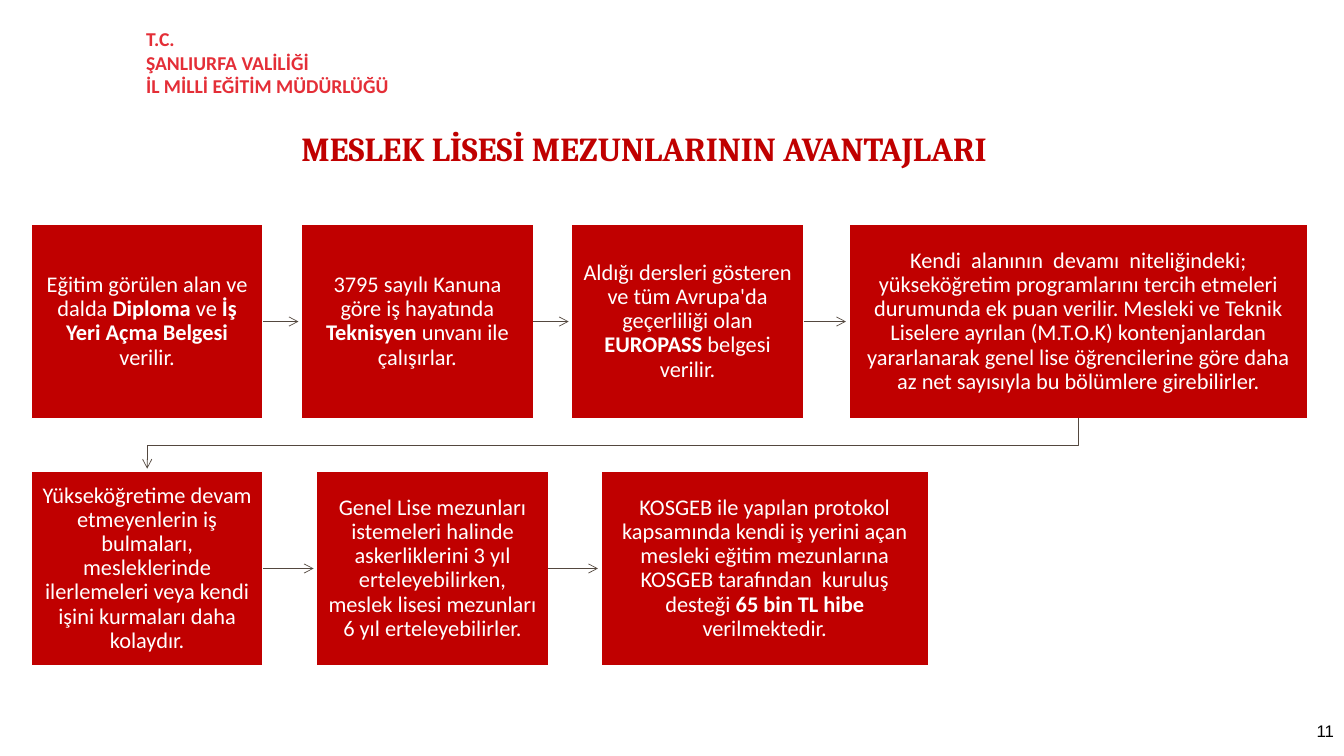
import pptx
import pptx.util
from dataclasses import dataclass
from lxml import etree
from pptx.dml.color import RGBColor
from pptx.enum.shapes import MSO_CONNECTOR, MSO_SHAPE
from pptx.enum.text import MSO_ANCHOR, PP_ALIGN
from pptx.oxml.ns import qn

In, Pt = pptx.util.Inches, pptx.util.Pt

HEADER = ["T.C.", "ŞANLIURFA VALİLİĞİ", "İL MİLLİ EĞİTİM MÜDÜRLÜĞÜ"]
TITLE = "MESLEK LİSESİ MEZUNLARININ AVANTAJLARI"
PAGE = "11"

# Each row: its top, then (gap before, width, text); ** switches bold on and off.
ROWS = [
    (2.23, [
        (0.31, 2.3, "Eğitim görülen alan ve dalda **Diploma **ve **İş Yeri Açma Belgesi **verilir."),
        (0.38, 2.3, "3795 sayılı Kanuna göre iş hayatında **Teknisyen **unvanı ile çalışırlar."),
        (0.38, 2.3, "Aldığı dersleri gösteren ve tüm Avrupa'da geçerliliği olan "
                    "**EUROPASS **belgesi verilir."),
        (0.45, 4.55, "Kendi  alanının  devamı  niteliğindeki; yükseköğretim programlarını tercih "
                     "etmeleri durumunda ek puan verilir. Mesleki ve Teknik Liselere ayrılan "
                     "(M.T.O.K) kontenjanlardan yararlanarak genel lise öğrencilerine göre daha "
                     "az net sayısıyla bu bölümlere girebilirler."),
    ]),
    (4.68, [
        (0.31, 2.3, "Yükseköğretime devam etmeyenlerin iş bulmaları, mesleklerinde "
                    "ilerlemeleri veya kendi işini kurmaları daha kolaydır."),
        (0.53, 2.3, "Genel Lise mezunları istemeleri halinde askerliklerini 3 yıl "
                    "erteleyebilirken, meslek lisesi mezunları 6 yıl erteleyebilirler."),
        (0.52, 3.25, "KOSGEB ile yapılan protokol kapsamında kendi iş yerini açan mesleki "
                     "eğitim mezunlarına KOSGEB tarafından  kuruluş desteği "
                     "**65 bin TL hibe **verilmektedir."),
    ]),
]
BOX_H = 1.92
ARROW_GAP = 0.03


@dataclass(frozen=True)
class Theme:
    red: str = "C00000"
    header: str = "E42E37"
    white: str = "FFFFFF"
    black: str = "000000"
    arrow: str = "53483F"
    body_font: str = "Calibri"
    title_font: str = "Cambria"
    page_font: str = "Arial"
    title_size: int = 24
    body_size: int = 16
    header_size: int = 14
    page_size: int = 12


T = Theme()


def write(sp, lines, font=T.body_font, size=T.body_size, color=T.white, bold=False,
          align=PP_ALIGN.LEFT, anchor=MSO_ANCHOR.TOP, spacing=None, insets=(0.1, 0.05, 0.1, 0.05)):
    """Fill a shape with lines of text; ** inside a line toggles bold."""
    tf = sp.text_frame
    tf.word_wrap = True
    tf.vertical_anchor = anchor
    tf.margin_left, tf.margin_top, tf.margin_right, tf.margin_bottom = map(In, insets)
    for i, line in enumerate(lines):
        p = tf.add_paragraph() if i else tf.paragraphs[0]
        p.alignment = align
        if spacing:
            p.line_spacing = spacing
        for j, part in enumerate(line.split("**")):
            r = p.add_run()
            r.text = part
            r.font.name, r.font.size = font, Pt(size)
            r.font.bold = bold or j % 2 == 1
            r.font.color.rgb = RGBColor.from_string(color)


def add_rect(slide, x, y, w, h, fill):
    sp = slide.shapes.add_shape(MSO_SHAPE.RECTANGLE, In(x), In(y), In(w), In(h))
    sp.shadow.inherit = False
    sp.fill.solid()
    sp.fill.fore_color.rgb = RGBColor.from_string(fill)
    sp.line.color.rgb = RGBColor.from_string(T.white)
    sp.line.width = Pt(1)
    return sp


def style_arrow(sp):
    sp.line.color.rgb = RGBColor.from_string(T.arrow)
    sp.line.width = Pt(0.5)
    ln = sp.line._get_or_add_ln()
    etree.SubElement(ln, qn("a:tailEnd"), type="arrow")


def add_arrow(slide, x1, x2, y):
    cx = slide.shapes.add_connector(MSO_CONNECTOR.STRAIGHT, In(x1), In(y), In(x2), In(y))
    style_arrow(cx)
    etree.SubElement(cx._element.spPr, qn("a:effectLst"))


def add_bent_arrow(slide, x1, y1, x2, y2):
    """Arrow that leaves downwards, runs across and arrives downwards."""
    mid = (y1 + y2 + ARROW_GAP) / 2
    fb = slide.shapes.build_freeform(In(x1), In(y1), scale=1.0)
    fb.add_line_segments([(In(x1), In(mid)), (In(x2), In(mid)), (In(x2), In(y2))], close=False)
    sp = fb.convert_to_shape()
    sp.shadow.inherit = False
    sp.fill.background()
    style_arrow(sp)


def add_row(slide, top, boxes):
    """Draw a row of boxes joined by arrows; return the centre x of each box."""
    right, centres = 0, []
    for gap, width, text in boxes:
        left = right + gap
        if centres:
            add_arrow(slide, right, left - ARROW_GAP, top + BOX_H / 2)
        sp = add_rect(slide, left, top, width, BOX_H, T.red)
        write(sp, [text], align=PP_ALIGN.CENTER, anchor=MSO_ANCHOR.MIDDLE, spacing=0.9,
              insets=(0.11, 0.12, 0.11, 0.12))
        right = left + width
        centres.append(left + width / 2)
    return centres


def main():
    prs = pptx.Presentation()
    prs.slide_width, prs.slide_height = In(13.33), In(7.5)
    slide = prs.slides.add_slide(prs.slide_layouts[5])

    title = slide.shapes.title
    title.left, title.top, title.width, title.height = In(2.98), In(1.25), In(6.93), In(0.43)
    write(title, [TITLE], font=T.title_font, size=T.title_size, color=T.red, bold=True,
          insets=(0.01, 0.02, 0, 0))
    header = add_rect(slide, 1.35, 0.31, 2.68, 0.62, T.white)
    header.line.fill.background()
    write(header, HEADER, size=T.header_size, color=T.header, bold=True, anchor=MSO_ANCHOR.MIDDLE)
    page = slide.shapes.add_textbox(In(11.57), In(7.1), In(1.76), In(0.3))
    write(page, [PAGE], font=T.page_font, size=T.page_size, color=T.black, align=PP_ALIGN.RIGHT)

    upper, lower = [add_row(slide, top, boxes) for top, boxes in ROWS]
    add_bent_arrow(slide, upper[-1], ROWS[0][0] + BOX_H, lower[0], ROWS[1][0] - ARROW_GAP)
    prs.save("out.pptx")


if __name__ == "__main__":
    main()
